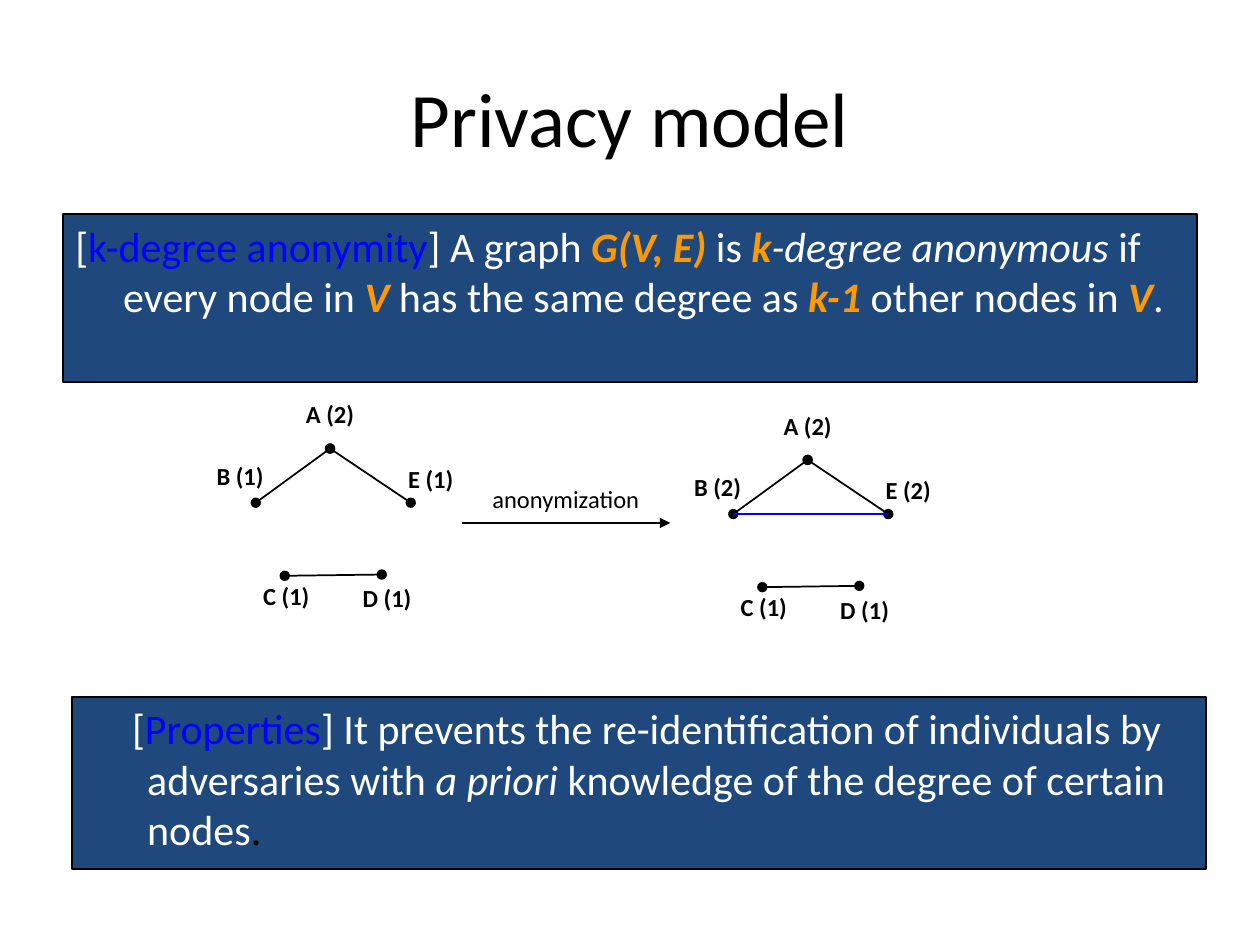
from lxml import etree
from pptx import Presentation
from pptx.dml.color import RGBColor
from pptx.enum.shapes import MSO_CONNECTOR, MSO_SHAPE
from pptx.enum.text import MSO_ANCHOR, PP_ALIGN
from pptx.oxml.ns import qn
from pptx.util import Inches, Pt

STRAIGHT = MSO_CONNECTOR.STRAIGHT
RECTANGLE = MSO_SHAPE.RECTANGLE
TOP, MIDDLE = MSO_ANCHOR.TOP, MSO_ANCHOR.MIDDLE
LEFT, CENTER = PP_ALIGN.LEFT, PP_ALIGN.CENTER

BLACK = RGBColor(0x00, 0x00, 0x00)
WHITE = RGBColor(0xFF, 0xFF, 0xFF)
NAVY = RGBColor(0x1F, 0x49, 0x7D)
BLUE = RGBColor(0x00, 0x00, 0xFF)
ORANGE = RGBColor(0xFF, 0x99, 0x00)

PLAIN = (WHITE, False, False)
ITALIC = (WHITE, False, True)
TERM = (BLUE, False, False)
SYMBOL = (ORANGE, True, True)
STOP = (BLACK, False, False)

DEFINITION = [
    ("[", PLAIN), ("k-degree anonymity", TERM), ("] A graph ", PLAIN),
    ("G(V, E)", SYMBOL), (" is ", PLAIN), ("k", SYMBOL),
    ("-degree anonymous", ITALIC), (" if every node in ", PLAIN),
    ("V", SYMBOL), (" has the same degree as ", PLAIN), ("k-1", SYMBOL),
    (" other nodes in ", PLAIN), ("V", SYMBOL), (".", PLAIN),
]
PROPERTIES = [
    ("[", PLAIN), ("Properties", TERM),
    ("] It prevents the re-identification of individuals by adversaries with ", PLAIN),
    ("a priori", ITALIC), (" knowledge of the degree of certain nodes", PLAIN),
    (".", STOP),
]

NODES = {"A": (2.62, 3.56), "B": (2.03, 3.99), "C": (2.26, 4.57),
         "D": (3.03, 4.56), "E": (3.26, 3.99)}
LABELS = {"A": (2.33, 3.12), "B": (1.62, 3.61), "C": (1.99, 4.56),
          "D": (2.78, 4.58), "E": (3.14, 3.63)}
EDGES = ["EA", "BA", "DC"]


def style_run(run, size, color, bold=False, italic=False):
    """Set the font of one run."""
    font = run.font
    font.name, font.size = "Calibri", Pt(size)
    font.bold, font.italic = bold, italic
    font.color.rgb = color


def add_text(shapes, text, left, top, width, height, size=14, bold=False,
             align=LEFT, anchor=TOP):
    """Add a wrapped line of black text."""
    frame = shapes.add_textbox(Inches(left), Inches(top),
                               Inches(width), Inches(height)).text_frame
    frame.word_wrap = True
    frame.vertical_anchor = anchor
    frame.text = text
    paragraph = frame.paragraphs[0]
    paragraph.alignment = align
    style_run(paragraph.runs[0], size, BLACK, bold)


def add_panel(shapes, parts, left, top, height, margin, indent):
    """Add a navy panel holding one paragraph of styled parts."""
    panel = shapes.add_shape(RECTANGLE, Inches(left), Inches(top),
                             Inches(9), Inches(height))
    panel.shadow.inherit = False
    panel.fill.solid()
    panel.fill.fore_color.rgb = NAVY
    panel.line.color.rgb = BLACK
    panel.line.width = Pt(1)
    frame = panel.text_frame
    frame.word_wrap = True
    frame.vertical_anchor = TOP
    paragraph = frame.paragraphs[0]
    paragraph.alignment = LEFT
    properties = paragraph._p.get_or_add_pPr()
    properties.set("marL", str(Inches(margin)))
    properties.set("indent", str(Inches(indent)))
    for text, (color, bold, italic) in parts:
        run = paragraph.add_run()
        run.text = text
        style_run(run, 24, color, bold, italic)


def add_line(shapes, start, end, color=BLACK, head=None, tail=None):
    """Add a straight line with optional end marks."""
    line = shapes.add_connector(STRAIGHT, *map(Inches, start + end))
    line.line.color.rgb = color
    line.line.width = Pt(1)
    outline = line.line._get_or_add_ln()
    for tag, mark in (("a:headEnd", head), ("a:tailEnd", tail)):
        if mark:
            etree.SubElement(outline, qn(tag), type=mark)
    etree.SubElement(line._element.spPr, qn("a:effectLst"))


def add_graph(slide, degrees, dx=0, dy=0, added_edge=None):
    """Add a grouped graph, moved by dx and dy, with an optional new edge."""
    shapes = slide.shapes.add_group_shape().shapes
    nodes = {name: (x + dx, y + dy) for name, (x, y) in NODES.items()}
    for start, end in EDGES:
        add_line(shapes, nodes[start], nodes[end], head="oval", tail="oval")
    for name, (x, y) in LABELS.items():
        add_text(shapes, f"{name} ({degrees[name]})", x + dx, y + dy,
                 0.81, 0.33, bold=True)
    if added_edge:
        start, end = added_edge
        add_line(shapes, nodes[start], nodes[end], BLUE)


def main():
    """Build and save the privacy model slide."""
    deck = Presentation()
    deck.slide_width, deck.slide_height = Inches(10), Inches(7.5)
    slide = deck.slides.add_slide(deck.slide_layouts[6])
    shapes = slide.shapes
    add_text(shapes, "Privacy model", 0.5, 0.3, 9, 1.25, size=44,
             align=CENTER, anchor=MIDDLE)
    add_panel(shapes, DEFINITION, 0.5, 1.7, 1.33, 0.38, -0.38)
    add_panel(shapes, PROPERTIES, 0.57, 5.53, 1.37, 0.5, -0.12)
    add_graph(slide, dict(A=2, B=1, C=1, D=1, E=1))
    add_graph(slide, dict(A=2, B=2, C=1, D=1, E=2), 3.79, 0.09, "BE")
    add_line(shapes, (3.67, 4.15), (5.32, 4.15), tail="triangle")
    add_text(shapes, "anonymization", 3.81, 3.79, 1.53, 0.33)
    deck.save("out.pptx")


if __name__ == "__main__":
    main()
